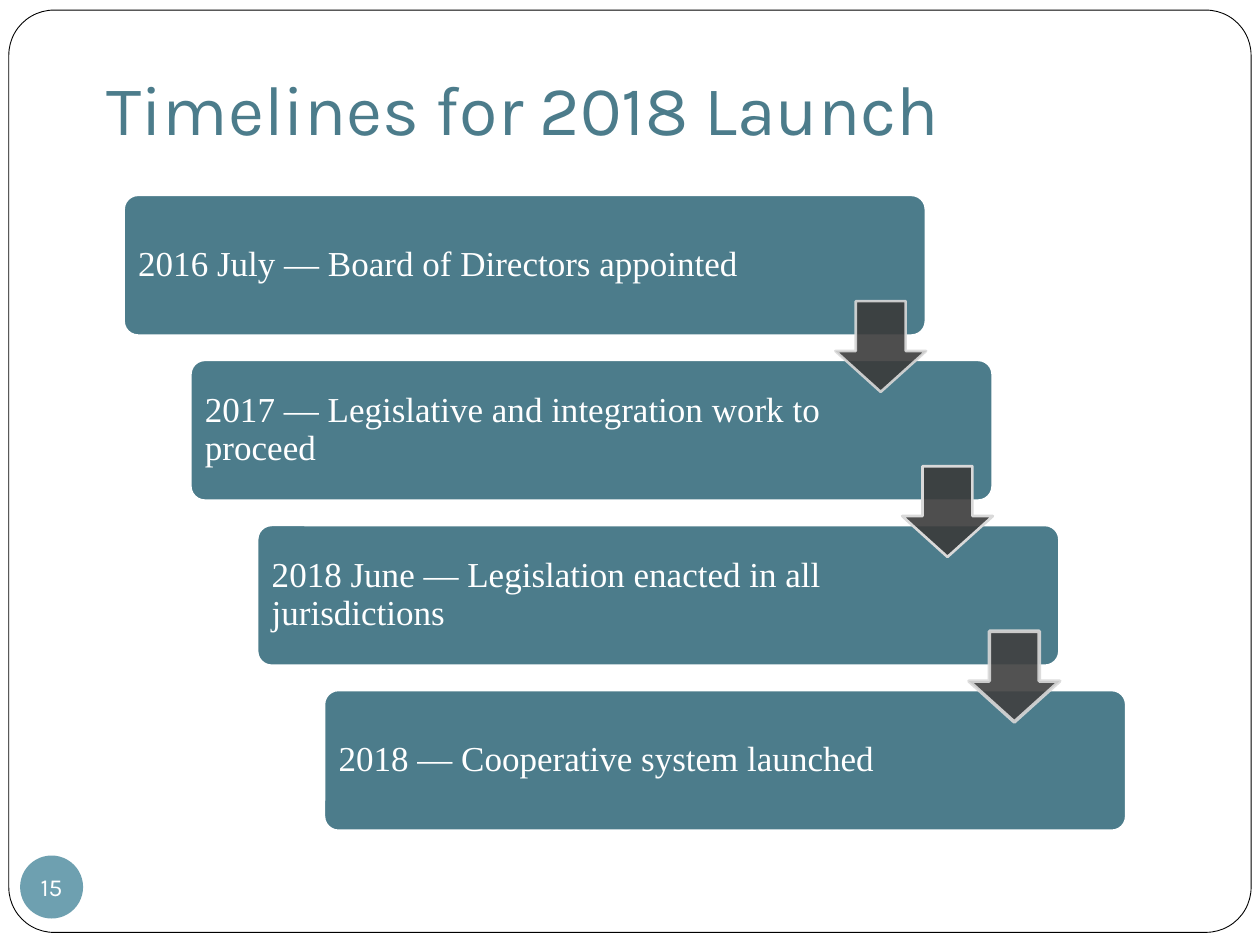
from dataclasses import dataclass
from typing import Any

from lxml.etree import SubElement
from pptx import Presentation
from pptx.dml.color import RGBColor
from pptx.enum.shapes import MSO_SHAPE as Shape
from pptx.enum.text import MSO_ANCHOR as Anchor, PP_ALIGN as Align
from pptx.oxml.ns import qn
from pptx.util import Inches, Pt

COLUMNS, ROWS = 100, 75


def colour(code):
    return RGBColor.from_string(code)


def set_opacity(fill_parent, percent):
    for value in fill_parent.find(qn("a:solidFill")):
        SubElement(value, qn("a:alpha")).set("val", str(percent * 1000))


@dataclass
class SlideStyle:
    page: Any
    cell_width: float
    cell_height: float
    heading_font: str = "Karla"
    body_font: str = "Times New Roman"
    teal: str = "4C7C8B"
    light_teal: str = "6EA0B0"
    white: str = "FFFFFF"

    def area(self, left, top, width, height):
        return (round(left * self.cell_width), round(top * self.cell_height),
                round(width * self.cell_width), round(height * self.cell_height))

    def shape(self, kind, area, fill, line=None, weight=1, adjustments=()):
        item = self.page.shapes.add_shape(kind, *self.area(*area))
        item.shadow.inherit = False
        item.fill.solid()
        item.fill.fore_color.rgb = colour(fill)
        if line:
            item.line.color.rgb = colour(line)
            item.line.width = Pt(weight)
        else:
            item.line.fill.background()
        for index, value in enumerate(adjustments):
            item.adjustments[index] = value
        return item

    def label(self, item, text, font, size, code, insets, anchor=Anchor.MIDDLE,
              align=Align.LEFT, wrap=True):
        frame = item.text_frame
        frame.text = text
        frame.word_wrap = wrap
        frame.vertical_anchor = anchor
        (frame.margin_left, frame.margin_top,
         frame.margin_right, frame.margin_bottom) = map(Inches, insets)
        para = frame.paragraphs[0]
        para.alignment = align
        for span in para.runs:
            span.font.name = font
            span.font.size = Pt(size)
            span.font.color.rgb = colour(code)
        return para

    def frame(self, area):
        self.shape(Shape.ROUNDED_RECTANGLE, area, self.white, "000000", 0.5, [0.049])

    def title(self, text, area):
        box = self.page.shapes.add_textbox(*self.area(*area))
        self.label(box, text, self.heading_font, 40, self.teal,
                   (0.1, 0.05, 0.1, 0.1), Anchor.BOTTOM)

    def page_number(self, text, area):
        badge = self.shape(Shape.OVAL, area, self.light_teal)
        self.label(badge, text, self.heading_font, 14, self.white,
                   (0, 0, 0, 0), align=Align.CENTER, wrap=False)

    def step(self, text, area):
        box = self.shape(Shape.ROUNDED_RECTANGLE, area, self.teal, self.white, 1, [0.1])
        para = self.label(box, text, self.body_font, 20, self.white,
                          (0.08, 0.08, 1.3, 0.08))
        para.line_spacing = 0.9

    def arrow(self, area, fill, weight, line_opacity):
        item = self.shape(Shape.DOWN_ARROW, area, fill, "D9D9D9", weight, [0.55, 0.45])
        properties = item.element.spPr
        set_opacity(properties, 90)
        set_opacity(properties.find(qn("a:ln")), line_opacity)


def main():
    deck = Presentation()
    deck.slide_width, deck.slide_height = Inches(10), Inches(7.5)
    page = deck.slides.add_slide(deck.slide_layouts[6])
    style = SlideStyle(page, deck.slide_width / COLUMNS, deck.slide_height / ROWS)

    style.frame((0.7, 0.8, 98.6, 73.2))
    style.title("Timelines for 2018 Launch", (7.5, 3.3, 85, 9.6))
    style.page_number("15", (1.6, 67.9, 5, 5))

    steps = [
        "2016 July — Board of Directors appointed",
        "2017 — Legislative and integration work to proceed",
        "2018 June — Legislation enacted in all jurisdictions",
        "2018 — Cooperative system launched",
    ]
    arrows = [("3B3B3B", 1.5, 90), ("3B3B3B", 1.5, 100), ("404040", 2, 90)]
    shift, drop = 5.3, 13.1
    for index, text in enumerate(steps):
        style.step(text, (9.85 + index * shift, 15.5 + index * drop, 63.6, 11.1))
    for index, look in enumerate(arrows):
        style.arrow((66.3 + index * shift, 23.9 + index * drop, 7.2, 7.2), *look)

    deck.save("out.pptx")


if __name__ == "__main__":
    main()
